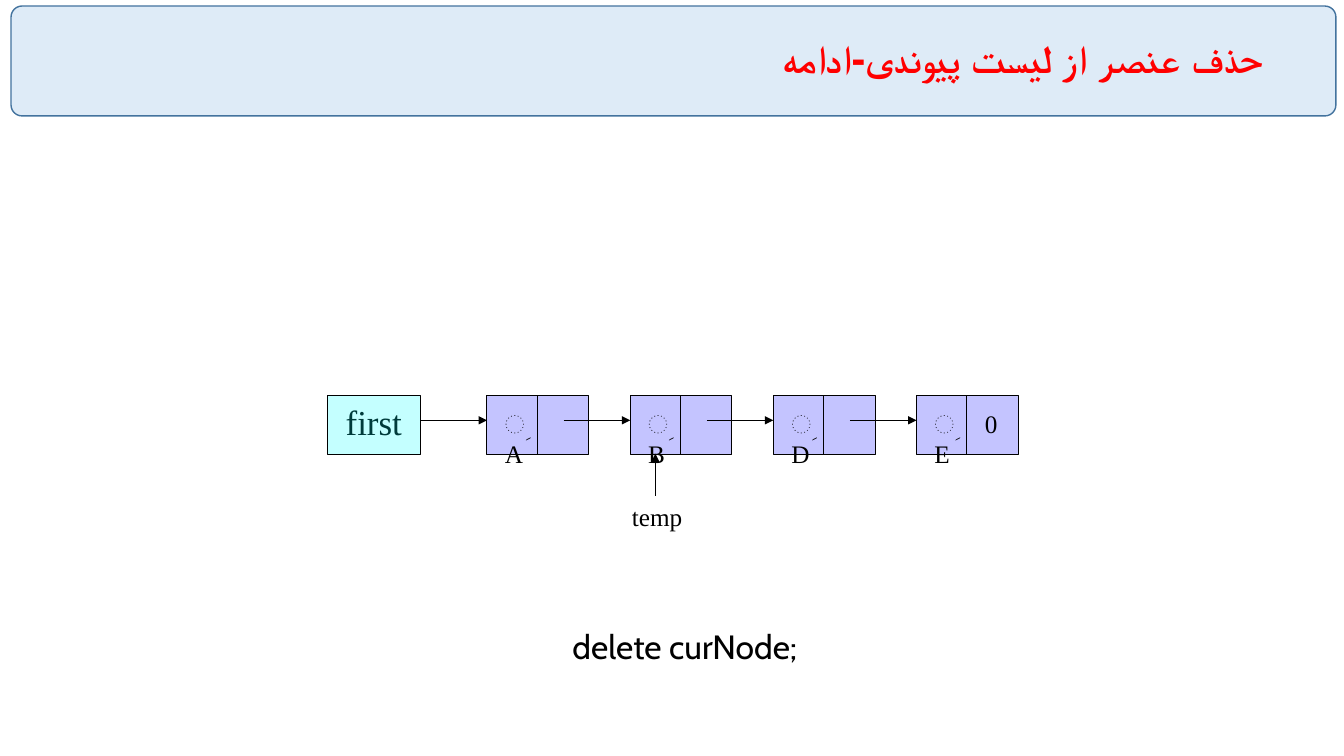
from dataclasses import dataclass

from lxml.etree import SubElement
from pptx import Presentation
from pptx.dml.color import RGBColor
from pptx.enum.shapes import MSO_CONNECTOR, MSO_SHAPE
from pptx.enum.text import MSO_ANCHOR, PP_ALIGN
from pptx.oxml.ns import qn
from pptx.util import Inches, Pt


@dataclass(frozen=True)
class Theme:
    ink: str = "000000"
    red: str = "FF0000"
    band: str = "DEEBF7"
    edge: str = "43739E"
    node: str = "0000FF"
    head: str = "00FFFF"
    serif: str = "Times New Roman"
    title: int = 28
    first: int = 25
    code: int = 24
    label: int = 18
    thin: float = 0.75


theme = Theme()
deck = Presentation()
deck.slide_width, deck.slide_height = Inches(13.33), Inches(7.5)
slide = deck.slides.add_slide(deck.slide_layouts[6])
shapes = slide.shapes


def write(area, text, size, font=theme.serif, color=theme.ink):
    """Add a one-line text box and return its frame, paragraph and run."""
    frame = shapes.add_textbox(*map(Inches, area)).text_frame
    frame.word_wrap = False
    para = frame.paragraphs[0]
    run = para.add_run()
    run.text = text
    run.font.size = Pt(size)
    run.font.name = font
    run.font.color.rgb = RGBColor.from_string(color)
    return frame, para, run


# Title band
band = shapes.add_shape(MSO_SHAPE.ROUNDED_RECTANGLE,
                        Inches(0.11), Inches(0.06), Inches(13.14), Inches(1.09))
band.adjustments[0] = 0.1
band.shadow.inherit = False
band.fill.solid()
band.fill.fore_color.rgb = RGBColor.from_string(theme.band)
band.line.color.rgb = RGBColor.from_string(theme.edge)
band.line.width = Pt(1)

frame, para, run = write((0.24, 0.15, 12.39, 0.9), "حذف عنصر از ليست پيوندی-ادامه",
                         theme.title, "Calibri", theme.red)
frame.word_wrap = True
frame.vertical_anchor = MSO_ANCHOR.MIDDLE
para.alignment = PP_ALIGN.RIGHT
para.line_spacing = 0.9
para._p.get_or_add_pPr().set("rtl", "1")
run.font.bold = True

# Code line
frame, para, run = write((5.58, 6.24, 2.57, 0.42), "delete curNode;", theme.code, "Cabin")
para.line_spacing = 0.8

# The list: head cell, then four nodes at an equal step
top, tall, wide = 3.92, 0.59, 1.01
start, step, mid = 4.83, 1.42, 4.17
letters = ["ِA", "ِB", "ِD", "ِE"]
lefts = [start + step * i for i in range(len(letters))]

write((3.33, top, 0.76, 0.52), "first", theme.first)

cells = [(3.25, 0.92, theme.head)] + [(left, wide, theme.node) for left in lefts]
for left, width, color in cells:
    cell = shapes.add_shape(MSO_SHAPE.RECTANGLE, Inches(left), Inches(top),
                            Inches(width), Inches(tall))
    cell.shadow.inherit = False
    cell.fill.solid()
    cell.fill.fore_color.rgb = RGBColor.from_string(color)
    tint = cell.fill._xPr.find(qn("a:solidFill"))[0]
    SubElement(tint, qn("a:alpha"), val="23000")
    cell.line.color.rgb = RGBColor.from_string(theme.ink)
    cell.line.width = Pt(theme.thin)

# Dividers, links and the temp pointer: x1, y1, x2, y2, arrow
base = top + tall
lines = [(left + 0.5, top, left + 0.5, base, False) for left in lefts]
lines += [(left - 0.66, mid, left, mid, True) for left in lefts]
lines.append((6.5, 4.92, 6.5, 4.5, True))
for *ends, arrow in lines:
    link = shapes.add_connector(MSO_CONNECTOR.STRAIGHT, *map(Inches, ends))
    link.line.color.rgb = RGBColor.from_string(theme.ink)
    link.line.width = Pt(theme.thin)
    if arrow:
        SubElement(link.line._get_or_add_ln(), qn("a:tailEnd"), type="triangle")
    SubElement(link._element.spPr, qn("a:effectLst"))

# Labels
for left, letter in zip(lefts, letters):
    write((left + 0.08, 4, 0.53, 0.4), letter, theme.label)
write((9.67, 4, 0.33, 0.4), "0", theme.label)
write((6.17, 4.92, 0.7, 0.4), "temp", theme.label)

deck.save("out.pptx")
